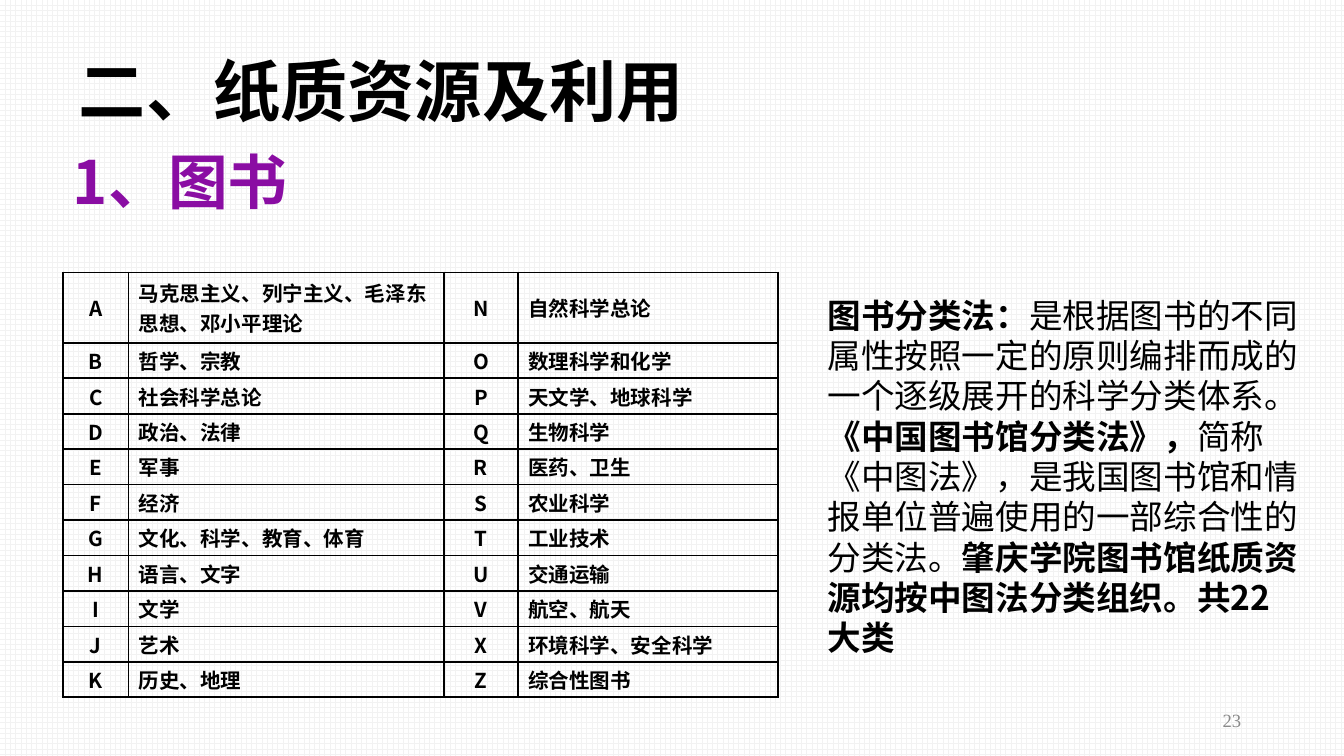
from lxml import etree
from pptx import Presentation
from pptx.dml.color import RGBColor
from pptx.enum.dml import MSO_PATTERN
from pptx.enum.text import MSO_ANCHOR, MSO_AUTO_SIZE, PP_ALIGN
from pptx.oxml.ns import qn
from pptx.util import Cm, Pt

CROSS = MSO_PATTERN.CROSS
MIDDLE, TOP = MSO_ANCHOR.MIDDLE, MSO_ANCHOR.TOP
LEFT, CENTER, RIGHT = PP_ALIGN.LEFT, PP_ALIGN.CENTER, PP_ALIGN.RIGHT
NO_AUTOFIT = MSO_AUTO_SIZE.NONE
TITLE_ONLY = 5

SANS = "Noto Sans CJK SC"
SERIF = "Times New Roman"
BLACK, PURPLE, GREY = "000000", "8A0DA3", "898989"

CATEGORIES = [
    ("A", "马克思主义、列宁主义、毛泽东思想、邓小平理论", "N", "自然科学总论"),
    ("B", "哲学、宗教", "O", "数理科学和化学"),
    ("C", "社会科学总论", "P", "天文学、地球科学"),
    ("D", "政治、法律", "Q", "生物科学"),
    ("E", "军事", "R", "医药、卫生"),
    ("F", "经济", "S", "农业科学"),
    ("G", "文化、科学、教育、体育", "T", "工业技术"),
    ("H", "语言、文字", "U", "交通运输"),
    ("I", "文学", "V", "航空、航天"),
    ("J", "艺术", "X", "环境科学、安全科学"),
    ("K", "历史、地理", "Z", "综合性图书"),
]
COLUMN_WIDTHS = [1.24, 5.96, 1.4, 4.91]
FIRST_ROW_HEIGHT, ROW_HEIGHT = 1.33, 0.67

EXPLANATION = [
    ("图书分类法：", True),
    ("是根据图书的不同属性按照一定的原则编排而成的一个逐级展开的科学分类体系。", False),
    ("《中国图书馆分类法》，", True),
    ("简称《中图法》，是我国图书馆和情报单位普遍使用的一部综合性的分类法。", False),
    ("肇庆学院图书馆纸质资源均按中图法分类组织。共22大类", True),
]


def color(value):
    return RGBColor.from_string(value)


def format_span(span, size, fill, bold=True, font=SANS):
    span.font.size = Pt(size)
    span.font.bold = bold
    span.font.name = font
    span.font.color.rgb = color(fill)
    east_asian = etree.SubElement(span.font._element, qn("a:ea"))
    east_asian.set("typeface", font)


def format_frame(frame, anchor, side, edge):
    frame.word_wrap = True
    frame.auto_size = NO_AUTOFIT
    frame.vertical_anchor = anchor
    frame.margin_left = frame.margin_right = Cm(side)
    frame.margin_top = frame.margin_bottom = Cm(edge)


def place(shape, left, top, width, height):
    shape.left, shape.top = Cm(left), Cm(top)
    shape.width, shape.height = Cm(width), Cm(height)


def add_box(page, area, anchor=TOP, side=0.19, edge=0.1):
    box = page.shapes.add_textbox(*[Cm(length) for length in area])
    format_frame(box.text_frame, anchor, side, edge)
    return box.text_frame.paragraphs[0]


def add_title(page, text):
    title = page.shapes.title
    place(title, 1.3, 0.76, 22.86, 2.06)
    format_frame(title.text_frame, MIDDLE, 0.19, 0.1)
    title.text_frame.text = text
    para = title.text_frame.paragraphs[0]
    para.alignment = LEFT
    para.line_spacing = 0.9
    format_span(para.runs[0], 36, BLACK)


def add_subtitle(page, text):
    para = add_box(page, (1.19, 2.79, 6.5, 1.75))
    para.text = text
    para.line_spacing = 0.9
    format_span(para.runs[0], 32, PURPLE)


def add_page_number(page, text):
    para = add_box(page, (17.93, 13.23, 5.72, 0.76), MIDDLE)
    para.text = text
    para.alignment = RIGHT
    format_span(para.runs[0], 10, GREY, False, SERIF)


def add_explanation(page, spans):
    para = add_box(page, (15.39, 5.44, 9.4, 7.19), TOP, 0.25, 0.13)
    for text, bold in spans:
        span = para.add_run()
        span.text = text
        format_span(span, 18, BLACK, bold)


def add_borders(cell):
    properties = cell._tc.get_or_add_tcPr()
    for side in ("lnL", "lnR", "lnT", "lnB"):
        line = etree.SubElement(properties, qn(f"a:{side}"), w=str(Pt(1)))
        fill = etree.SubElement(line, qn("a:solidFill"))
        etree.SubElement(fill, qn("a:srgbClr"), val=BLACK)


def fill_cell(cell, text, alignment):
    add_borders(cell)
    cell.fill.background()
    cell.vertical_anchor = MIDDLE
    cell.margin_left = cell.margin_right = Cm(0.19)
    cell.margin_top = cell.margin_bottom = 0
    para = cell.text_frame.paragraphs[0]
    para.text = text
    para.alignment = alignment
    format_span(para.runs[0], 11, BLACK)


def add_category_table(page):
    heights = [FIRST_ROW_HEIGHT] + [ROW_HEIGHT] * (len(CATEGORIES) - 1)
    table = page.shapes.add_table(
        len(heights), len(COLUMN_WIDTHS), Cm(1.19), Cm(5.15),
        Cm(sum(COLUMN_WIDTHS)), Cm(sum(heights))).table
    table.first_row = table.horz_banding = False
    for column, width in zip(table.columns, COLUMN_WIDTHS):
        column.width = Cm(width)
    for row, height, texts in zip(table.rows, heights, CATEGORIES):
        row.height = Cm(height)
        for index, text in enumerate(texts):
            fill_cell(row.cells[index], text, LEFT if index % 2 else CENTER)


def set_background(page):
    fill = page.background.fill
    fill.patterned()
    fill.pattern = CROSS
    fill.fore_color.rgb = color("F2F2F2")
    fill.back_color.rgb = color("FFFFFF")


def main():
    deck = Presentation()
    deck.slide_width, deck.slide_height = Cm(25.4), Cm(14.29)
    page = deck.slides.add_slide(deck.slide_layouts[TITLE_ONLY])
    set_background(page)
    add_title(page, "二、纸质资源及利用")
    add_subtitle(page, "1、图书")
    add_page_number(page, "23")
    add_category_table(page)
    add_explanation(page, EXPLANATION)
    deck.save("out.pptx")


if __name__ == "__main__":
    main()
